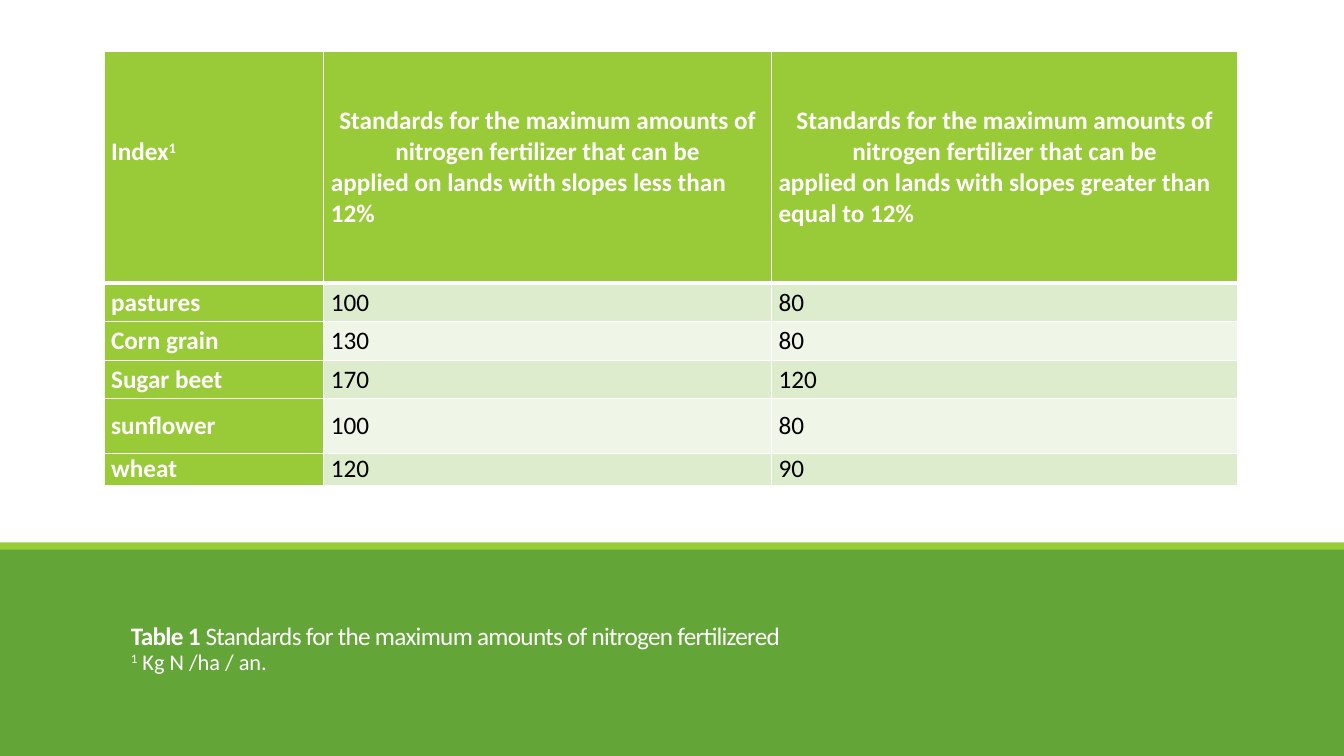
import pptx
import pptx.util
import pptx.dml.color
import pptx.enum.shapes
import pptx.enum.text
import pptx.oxml
import pptx.oxml.ns
from pptx.util import Cm

FONT = "Calibri"
WHITE, BLACK = "FFFFFF", "000000"
GREEN, LIME = "63A537", "99CB38"
BANDS = ("DEECCE", "EFF6E8")
CENTER = pptx.enum.text.PP_ALIGN.CENTER
LEFT = pptx.enum.text.PP_ALIGN.LEFT
MIDDLE = pptx.enum.text.MSO_ANCHOR.MIDDLE

COLUMN_WIDTHS = (5.54, 11.28, 11.76)
ROW_HEIGHTS = (5.84, 0.97, 0.97, 0.97, 1.37, 0.81)
STANDARD = "Standards for the maximum amounts of nitrogen fertilizer that can be"
SLOPES = ("applied on lands with slopes less than 12%",
          "applied on lands with slopes greater than equal to 12%")
CROPS = (("pastures", "100", "80"),
         ("Corn grain", "130", "80"),
         ("Sugar beet", "170", "120"),
         ("sunflower", "100", "80"),
         ("wheat", "120", "90"))


def rgb(code):
    return pptx.dml.color.RGBColor.from_string(code)


def add_span(para, text, size=18, color=WHITE, bold=False, raised=False, spacing=None):
    span = para.add_run()
    span.text = text
    span.font.name = FONT
    span.font.size = pptx.util.Pt(size)
    span.font.bold = bold
    span.font.color.rgb = rgb(color)
    properties = span.font._element
    if raised:
        properties.set("baseline", "30000")
    if spacing is not None:
        properties.set("spc", str(round(spacing * 100)))


def add_band(page, top, height, color):
    band = page.shapes.add_shape(pptx.enum.shapes.MSO_SHAPE.RECTANGLE,
                                 0, Cm(top), Cm(33.87), Cm(height))
    band.shadow.inherit = False
    band.fill.solid()
    band.fill.fore_color.rgb = rgb(color)
    band.line.fill.background()


def prepare_frame(box, anchor):
    frame = box.text_frame
    frame.word_wrap = True
    frame.auto_size = pptx.enum.text.MSO_AUTO_SIZE.NONE
    frame.vertical_anchor = anchor
    frame.margin_left = frame.margin_right = Cm(0.25)
    frame.margin_top = frame.margin_bottom = 0
    return frame.paragraphs[0]


def add_title(page):
    title = page.shapes.title
    title.left, title.top, title.width, title.height = Cm(3.05), Cm(14.1), Cm(28.09), Cm(2.29)
    title._element.getparent().append(title._element)  # bring in front of the bands
    para = prepare_frame(title, pptx.enum.text.MSO_ANCHOR.BOTTOM)
    para.alignment = LEFT
    para.line_spacing = 0.85
    add_span(para, "Table 1", bold=True, spacing=-0.5)
    add_span(para, " Standards for the maximum amounts of nitrogen fertilizered", spacing=-0.5)


def add_footnote(page):
    box = page.shapes.add_textbox(Cm(3.05), Cm(16.41), Cm(28.09), Cm(1.65))
    para = prepare_frame(box, pptx.enum.text.MSO_ANCHOR.TOP)
    para.line_spacing = 0.9
    add_span(para, "1", size=16, raised=True)
    add_span(para, " Kg N /ha / an.", size=16)


def set_borders(cell, top=1, bottom=1):
    properties = cell._tc.get_or_add_tcPr()
    widths = {"L": 1, "R": 1, "T": top, "B": bottom}
    for position, (side, width) in enumerate(widths.items()):
        line = pptx.oxml.parse_xml(
            f'<a:ln{side} {pptx.oxml.ns.nsdecls("a")} w="{pptx.util.Pt(width)}">'
            f'<a:solidFill><a:srgbClr val="{WHITE}"/></a:solidFill></a:ln{side}>')
        properties.insert(position, line)


def format_cell(cell, fill, **borders):
    cell.fill.solid()
    cell.fill.fore_color.rgb = rgb(fill)
    cell.vertical_anchor = MIDDLE
    cell.margin_left = cell.margin_right = Cm(0.18)
    cell.margin_top = cell.margin_bottom = 0
    set_borders(cell, **borders)


def add_standards_table(page):
    frame = page.shapes.add_table(len(ROW_HEIGHTS), len(COLUMN_WIDTHS), Cm(2.62), Cm(1.3),
                                  Cm(sum(COLUMN_WIDTHS)), Cm(sum(ROW_HEIGHTS)))
    table = frame.table
    table.first_col = True
    for column, width in zip(table.columns, COLUMN_WIDTHS):
        column.width = Cm(width)
    for row, height in zip(table.rows, ROW_HEIGHTS):
        row.height = Cm(height)

    # Header row
    for cell in table.rows[0].cells:
        format_cell(cell, LIME, bottom=3)
    index = table.cell(0, 0)
    index.margin_bottom = Cm(0.77)  # lifts the label above the middle
    para = index.text_frame.paragraphs[0]
    add_span(para, "Index", bold=True)
    add_span(para, "1", bold=True, raised=True)
    for column, slope in enumerate(SLOPES, start=1):
        text = table.cell(0, column).text_frame
        text.paragraphs[0].alignment = CENTER
        add_span(text.paragraphs[0], STANDARD, bold=True)
        add_span(text.add_paragraph(), slope, bold=True)

    # Crop rows
    for row, crop in enumerate(CROPS, start=1):
        for column, text in enumerate(crop):
            cell = table.cell(row, column)
            label = column == 0
            format_cell(cell, LIME if label else BANDS[(row - 1) % 2], top=3 if row == 1 else 1)
            add_span(cell.text_frame.paragraphs[0], text,
                     color=WHITE if label else BLACK, bold=label)


def main():
    deck = pptx.Presentation()
    deck.slide_width, deck.slide_height = Cm(33.87), Cm(19.05)
    page = deck.slides.add_slide(deck.slide_layouts[5])

    # Caption area
    add_band(page, 13.77, 5.28, GREEN)
    add_band(page, 13.67, 0.18, LIME)
    add_title(page)
    add_footnote(page)

    add_standards_table(page)
    deck.save("out.pptx")


if __name__ == "__main__":
    main()
